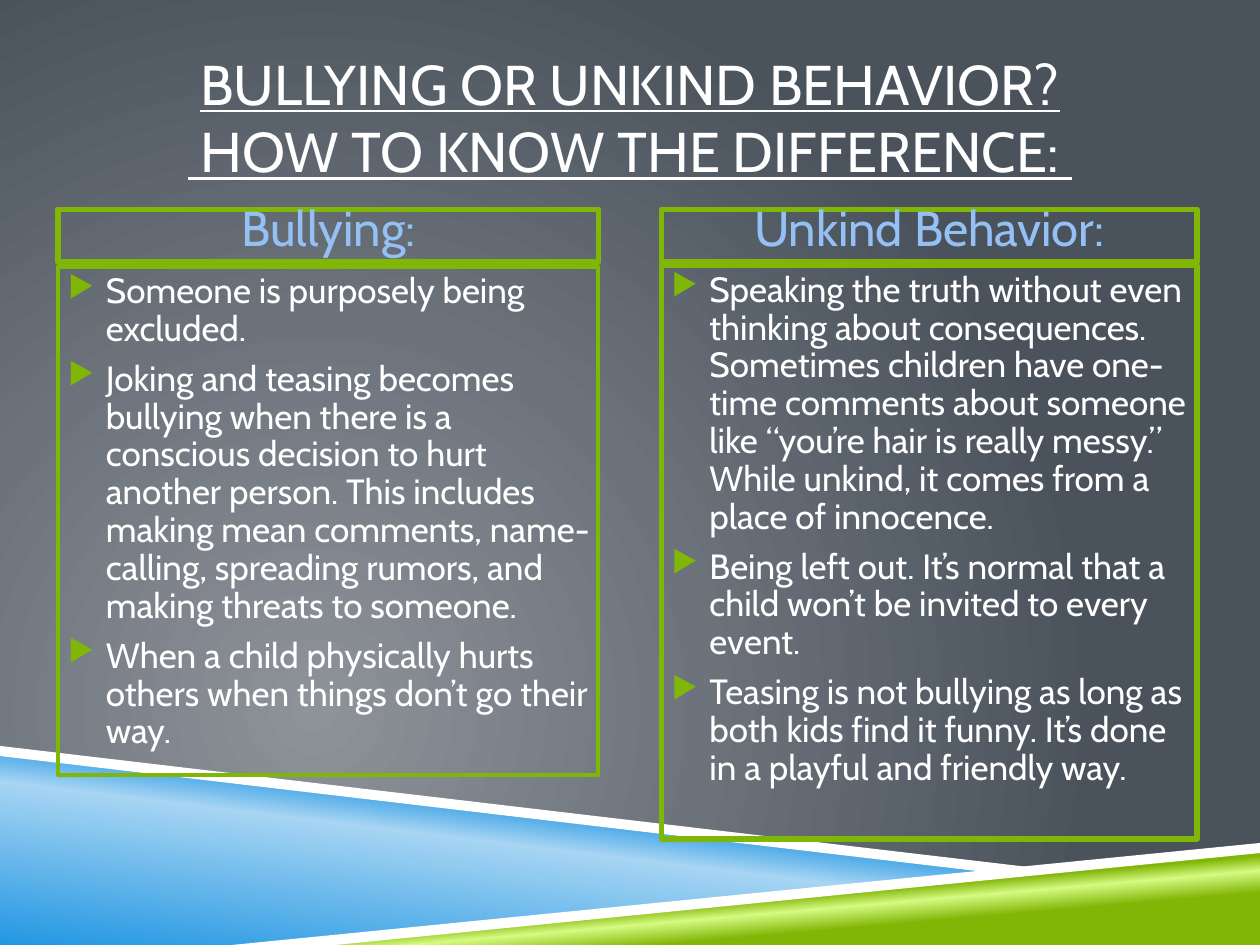
from lxml.etree import SubElement
from pptx import Presentation
from pptx.dml.color import RGBColor
from pptx.enum.shapes import MSO_SHAPE
from pptx.enum.text import MSO_ANCHOR, PP_ALIGN
from pptx.oxml.ns import qn
from pptx.util import Inches, Pt

COLORS = {
    "white": "FFFFFF", "green": "80B606", "lime": "D6FB82",
    "blue": "2397E2", "sky": "A7D5F3", "heading": "94C0F4",
    "glow": "8E939A", "slate": "4A525C",
}
FONT = "Cabin"
COLUMNS, ROWS = 100, 75  # square grid over the whole slide
UNIT = Inches(10) / COLUMNS


def grid(*cells):
    return [round(cell * UNIT) for cell in cells]


def rgb(name):
    return RGBColor.from_string(COLORS[name])


def add_gradient(fill, owner, stops, angle=None, center=None):
    """Linear gradient at an angle, or a circular one around center."""
    fill.gradient()
    gradient = owner.find(".//" + qn("a:gradFill"))
    for child in list(gradient):
        gradient.remove(child)
    stop_list = SubElement(gradient, qn("a:gsLst"))
    for position, name in stops:
        stop = SubElement(stop_list, qn("a:gs"), pos=str(position * 1000))
        SubElement(stop, qn("a:srgbClr"), val=COLORS[name])
    if center:
        shade = SubElement(gradient, qn("a:path"), path="circle")
        sides = {side: str(share * 1000) for side, share in zip("ltrb", center)}
        SubElement(shade, qn("a:fillToRect"), **sides)
    else:
        SubElement(gradient, qn("a:lin"), ang=str(angle * 60000), scaled="0")


def add_band(page, points, color=None, stops=None, angle=None):
    start, *rest = [grid(*point) for point in points]
    builder = page.shapes.build_freeform(*start)
    builder.add_line_segments(rest, close=True)
    band = builder.convert_to_shape()
    band.shadow.inherit = False
    band.line.fill.background()
    if stops:
        add_gradient(band.fill, band.element, stops, angle=angle)
    else:
        band.fill.solid()
        band.fill.fore_color.rgb = rgb(color)


def add_backdrop(page, width, height):
    add_gradient(page.background.fill, page.element,
                 [(0, "glow"), (100, "slate")], center=(50, 100, 100, 50))
    # Coloured wedges
    add_band(page, [(19.8, height), (width, 67.2), (width, height)],
             stops=[(28, "green"), (40, "lime"), (48, "green")], angle=265)
    add_band(page, [(0, 59.7), (79.2, 69.2), (20, height), (0, height)],
             stops=[(0, "blue"), (52, "sky"), (66, "blue")], angle=277)
    # White edges
    add_band(page, [(0, 59.2), (0, 60), (79, 69.3), (83.2, 69)], color="white")
    add_band(page, [(width, 66.9), (18.4, height), (26.6, height), (width, 67.7)],
             color="white")


def set_frame(box, anchor):
    frame = box.text_frame
    frame.word_wrap = True
    frame.vertical_anchor = anchor
    frame.margin_left = frame.margin_right = 0
    frame.margin_top = frame.margin_bottom = Inches(0.05)
    return frame


def write(para, text, size, color="white", align=PP_ALIGN.LEFT, underline=None):
    para.text = text
    para.alignment = align
    for span in para.runs:
        span.font.name = FONT
        span.font.size = Pt(size)
        span.font.color.rgb = rgb(color)
        span.font.underline = underline


def add_bullet(para):
    props = para._p.get_or_add_pPr()
    props.set("marL", str(Inches(0.38)))
    props.set("indent", str(Inches(-0.3)))
    marker = SubElement(props, qn("a:buClr"))
    SubElement(marker, qn("a:srgbClr"), val=COLORS["green"])
    SubElement(props, qn("a:buSzPct"), val="85000")
    SubElement(props, qn("a:buChar"), char="▶")


def add_title(page, box, text):
    title = page.shapes.add_textbox(*grid(*box))
    frame = set_frame(title, MSO_ANCHOR.MIDDLE)
    write(frame.paragraphs[0], text, 32, align=PP_ALIGN.CENTER, underline=True)


def add_outline(page, box, weight, anchor):
    outline = page.shapes.add_shape(MSO_SHAPE.RECTANGLE, *grid(*box))
    outline.shadow.inherit = False
    outline.fill.background()
    outline.line.color.rgb = rgb("green")
    outline.line.width = Pt(weight)
    return set_frame(outline, anchor)


def add_panel(page, box, heading, points, body_top, weight):
    """Outlined heading with an outlined bullet list below it."""
    left, top, width, height = box
    head = add_outline(page, (left, top, width, 4.2), 3, MSO_ANCHOR.BOTTOM)
    write(head.paragraphs[0], heading, 28, "heading", PP_ALIGN.CENTER)

    body = add_outline(page, (left, top + body_top, width, height - body_top),
                       weight, MSO_ANCHOR.TOP)
    for index, point in enumerate(points):
        para = body.add_paragraph() if index else body.paragraphs[0]
        add_bullet(para)
        para.line_spacing = 0.9
        para.space_before = Pt(7 if index else 0)
        write(para, point, 20)


def main():
    deck = Presentation()
    deck.slide_width, deck.slide_height = grid(COLUMNS, ROWS)
    page = deck.slides.add_slide(deck.slide_layouts[6])

    add_backdrop(page, COLUMNS, ROWS)
    add_title(page, (7.5, 3, 85, 12.5),
              "BULLYING OR UNKIND BEHAVIOR?\v HOW TO KNOW THE DIFFERENCE: ")
    add_panel(page, (4.6, 16.6, 42.9, 44.9), "Bullying:", [
        "Someone is purposely being excluded.",
        "Joking and teasing becomes bullying when there is a conscious decision "
        "to hurt another person. This includes making mean comments, "
        "name-calling, spreading rumors, and making threats to someone.",
        "When a child physically hurts others when things don’t go their way.",
    ], body_top=4.6, weight=2.25)
    add_panel(page, (52.5, 16.6, 42.5, 50), "Unkind Behavior:", [
        "Speaking the truth without even thinking about consequences. Sometimes "
        "children have one-time comments about someone like “you’re hair is "
        "really messy.” While unkind, it comes from a place of innocence.",
        "Being left out. It’s normal that a child won’t be invited to every event.",
        "Teasing is not bullying as long as both kids find it funny. It’s done "
        "in a playful and friendly way.",
    ], body_top=4.5, weight=3)

    deck.save("out.pptx")


if __name__ == "__main__":
    main()
